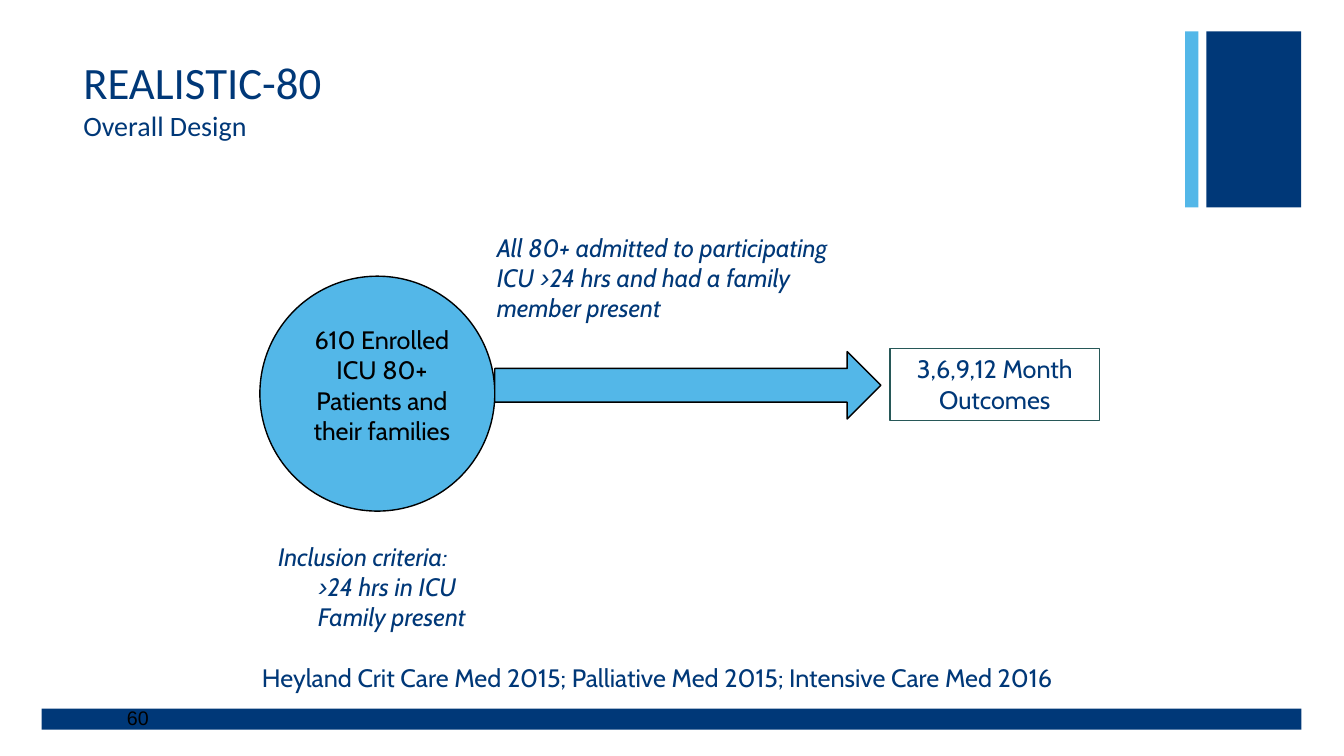
from dataclasses import dataclass

from pptx import Presentation
from pptx import util as u
from pptx.dml.color import RGBColor
from pptx.enum import shapes, text

SHAPE = shapes.MSO_SHAPE
ALIGN = text.PP_ALIGN
ANCHOR = text.MSO_ANCHOR


@dataclass(frozen=True)
class Theme:
    navy: str = "003878"
    sky: str = "53B7E8"
    green: str = "275858"
    black: str = "000000"
    title_size: int = 32
    subtitle_size: int = 20
    body_size: int = 18
    number_size: int = 14
    title_font: str = "Calibri"
    body_font: str = "Cabin"
    number_font: str = "Arial"


THEME = Theme()


def colour(value):
    return RGBColor.from_string(value)


def add_figure(page, kind, at, fill=None, line=None, width=1):
    figure = page.shapes.add_shape(kind, *map(u.Cm, at))
    figure.shadow.inherit = False
    if fill:
        figure.fill.solid()
        figure.fill.fore_color.rgb = colour(fill)
    else:
        figure.fill.background()
    if line:
        figure.line.color.rgb = colour(line)
        figure.line.width = u.Pt(width)
    else:
        figure.line.fill.background()
    return figure


def add_box(page, at, anchor=ANCHOR.TOP):
    box = page.shapes.add_textbox(*map(u.Cm, at))
    box.text_frame.word_wrap = True
    box.text_frame.vertical_anchor = anchor
    return box


def add_span(para, words, size=THEME.body_size, font=THEME.body_font,
             ink=THEME.navy, italic=False):
    span = para.add_run()
    span.text = words
    span.font.size = u.Pt(size)
    span.font.name = font
    span.font.color.rgb = colour(ink)
    span.font.italic = italic


def write(box, words, align=ALIGN.LEFT, indent=0, **style):
    """Write one paragraph per line, indenting every line after the first."""
    frame = box.text_frame
    for index, line in enumerate(words.split("\n")):
        para = frame.add_paragraph() if index else frame.paragraphs[0]
        para.alignment = align
        if index and indent:
            para._p.get_or_add_pPr().set("marL", str(u.Cm(indent)))
        add_span(para, line, **style)


def add_frame(page):
    """Draw the footer bar and the corner blocks."""
    for at, fill in (
        ((1.05, 17.86, 31.75, 0.53), THEME.navy),
        ((30.4, 0.79, 2.39, 4.44), THEME.navy),
        ((29.87, 0.79, 0.33, 4.44), THEME.sky),
    ):
        add_figure(page, SHAPE.RECTANGLE, at, fill)


def add_title(page, title, subtitle):
    box = add_box(page, (1.85, 0.61, 28, 3.1), ANCHOR.BOTTOM)
    para = box.text_frame.paragraphs[0]
    add_span(para, title, THEME.title_size, THEME.title_font)
    para.add_line_break()
    add_span(para, subtitle, THEME.subtitle_size, THEME.title_font)


def add_flow(page):
    """Draw the enrolled group, the arrow and the outcomes."""
    left, top, size = 6.55, 6.96, 5.92
    add_figure(page, SHAPE.OVAL, (left, top, size, size), THEME.sky, THEME.black)
    add_figure(page, SHAPE.RIGHT_ARROW, (left + size, 8.86, 9.73, 1.7),
               THEME.sky, THEME.black)
    write(add_box(page, (7.62, 8.05, 4.01, 4.11)),
          "610 Enrolled\nICU 80+ Patients and their families",
          align=ALIGN.CENTER, ink=THEME.black)
    outcomes = add_figure(page, SHAPE.RECTANGLE, (22.43, 8.79, 5.28, 1.8),
                          line=THEME.green, width=0.75)
    outcomes.text_frame.word_wrap = True
    outcomes.text_frame.vertical_anchor = ANCHOR.TOP
    write(outcomes, "3,6,9,12 Month Outcomes", align=ALIGN.CENTER)


def add_notes(page):
    """Add the criteria, the source line and the page number."""
    write(add_box(page, (12.27, 5.72, 8.89, 2.57)),
          "All 80+ admitted to participating ICU >24 hrs and had a family member present",
          italic=True)
    write(add_box(page, (6.76, 13.51, 6.35, 2.57)),
          "Inclusion criteria:\n>24 hrs in ICU\nFamily present",
          indent=1, italic=True)
    write(add_box(page, (6.35, 16.56, 22.02, 1.02)),
          "Heyland Crit Care Med 2015; Palliative Med 2015; Intensive Care Med 2016")
    write(add_box(page, (2.95, 17.86, 25.32, 0.46), ANCHOR.MIDDLE), "60",
          size=THEME.number_size, font=THEME.number_font, ink=THEME.black)


def main():
    deck = Presentation()
    deck.slide_width, deck.slide_height = u.Cm(33.87), u.Cm(19.05)
    page = deck.slides.add_slide(deck.slide_layouts[6])
    add_frame(page)
    add_title(page, "REALISTIC-80", "Overall Design")
    add_flow(page)
    add_notes(page)
    deck.save("out.pptx")


if __name__ == "__main__":
    main()
